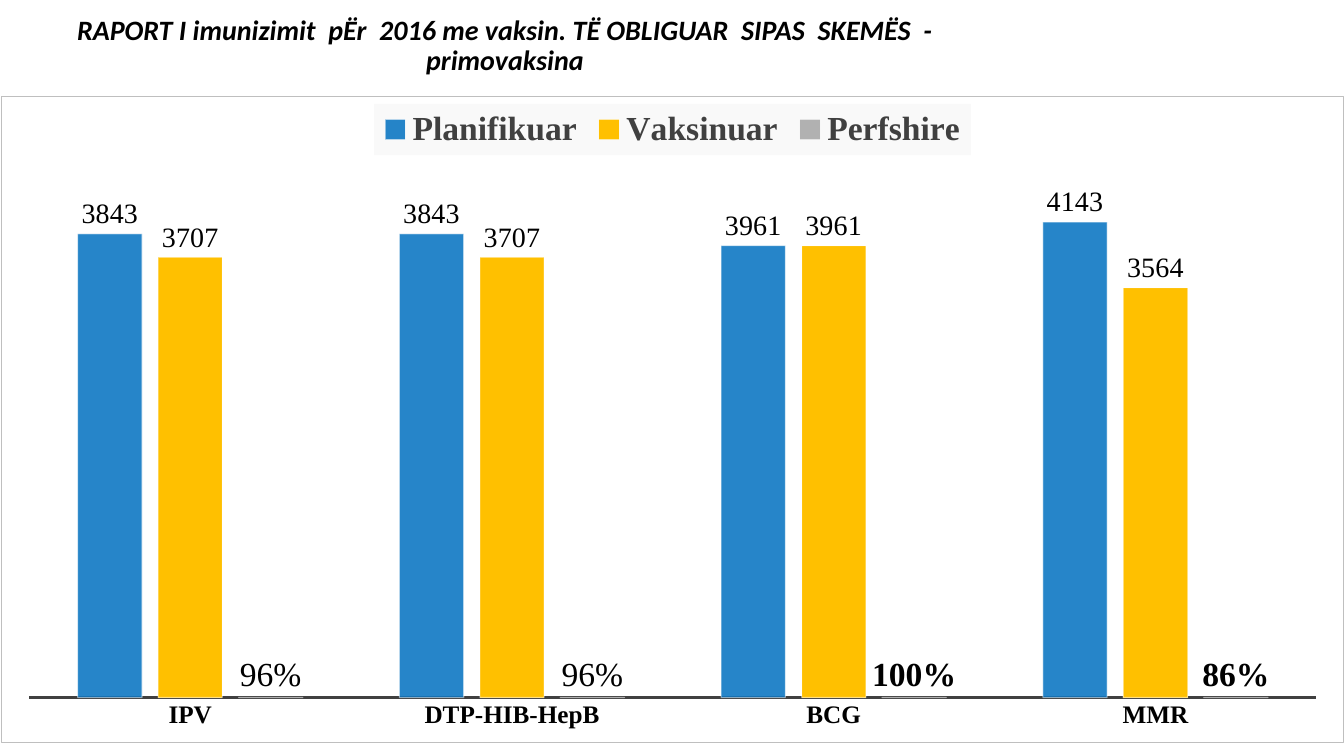
from lxml import etree
from pptx import Presentation
from pptx.chart.data import CategoryChartData
from pptx.dml.color import RGBColor
from pptx.enum.chart import XL_CHART_TYPE, XL_LABEL_POSITION, XL_LEGEND_POSITION, XL_TICK_MARK
from pptx.enum.text import MSO_ANCHOR, PP_ALIGN
from pptx.oxml import parse_xml
from pptx.oxml.ns import nsdecls, qn
from pptx.util import Pt

COLUMNS = XL_CHART_TYPE.COLUMN_CLUSTERED
ABOVE_BAR = XL_LABEL_POSITION.OUTSIDE_END
LEGEND_TOP = XL_LEGEND_POSITION.TOP
NO_TICK = XL_TICK_MARK.NONE
MIDDLE, CENTER = MSO_ANCHOR.MIDDLE, PP_ALIGN.CENTER

TITLE = "RAPORT I imunizimit  pËr  2016 me vaksin. TË OBLIGUAR  SIPAS  SKEMËS  - primovaksina"
VACCINES = ["IPV", "DTP-HIB-HepB", "BCG", "MMR"]
SERIES = [
    {"name": "Planifikuar", "values": [3943, 3943, 3843, 4043], "color": "planned", "opacity": 85,
     "labels": ["3843", "3843", "3961", "4143"], "size": 20, "format": "General"},
    {"name": "Vaksinuar", "values": [3742, 3742, 3843, 3485], "color": "vaccinated", "opacity": 100,
     "labels": ["3707", "3707", "3961", "3564"], "size": 20, "format": "General"},
    {"name": "Perfshire", "values": [0.95, 0.95, 1, 0.86], "color": "coverage", "opacity": 85,
     "labels": ["96%", "96%"], "size": 24, "format": "0%"},
]
COLORS = {
    "text": "000000", "planned": "0070C0", "vaccinated": "FFC000", "coverage": "A5A5A5",
    "bar_line": "FFFFFF", "axis": "404040", "legend": "404040", "legend_fill": "F9F9F9",
    "border": "BFBFBF",
}
TITLE_FONT, CHART_FONT = "Calibri", "Times New Roman"

EMU_PER_PX = 9071
SLIDE_SIZE = (1344, 756)
TITLE_BOX = (1, 0, 1008, 126)
TITLE_BOTTOM_INSET = 38
CHART_BOX = (1, 96, 1343, 647)
PLOT_BOX = (29, 168, 1288, 530)


def px(*lengths):
    return [length * EMU_PER_PX for length in lengths]


def rgb(name):
    return RGBColor.from_string(COLORS[name])


def format_font(font, size, color="text", name=CHART_FONT, bold=False, italic=False):
    font.size, font.name, font.bold, font.italic = Pt(size), name, bold, italic
    font.color.rgb = rgb(color)


def write_text(frame, text, **font_format):
    paragraph = frame.paragraphs[0]
    run = paragraph.add_run()
    run.text = text
    format_font(run.font, **font_format)
    return paragraph


def set_opacity(color_element, percent):
    etree.SubElement(color_element, qn("a:alpha")).set("val", str(percent * 1000))


def shape_properties(content):
    return parse_xml(f'<c:spPr {nsdecls("c", "a")}>{content}</c:spPr>')


def solid_fill(color):
    return f'<a:solidFill><a:srgbClr val="{COLORS[color]}"/></a:solidFill>'


def place_plot(plot_area):
    """Fix the inner plot area as fractions of the chart box."""
    for old_layout in plot_area.findall(qn("c:layout")):
        plot_area.remove(old_layout)
    left, top, width, height = CHART_BOX
    fractions = {
        "x": (PLOT_BOX[0] - left) / width, "y": (PLOT_BOX[1] - top) / height,
        "w": PLOT_BOX[2] / width, "h": PLOT_BOX[3] / height,
    }
    parts = '<c:layoutTarget val="inner"/><c:xMode val="edge"/><c:yMode val="edge"/>'
    parts += "".join(f'<c:{key} val="{value:.4f}"/>' for key, value in fractions.items())
    plot_area.insert(0, parse_xml(
        f'<c:layout {nsdecls("c")}><c:manualLayout>{parts}</c:manualLayout></c:layout>'))


def format_series(series, element, content):
    fill, line = series.format.fill, series.format.line
    fill.solid()
    fill.fore_color.rgb = rgb(content["color"])
    line.width = Pt(0.75)
    line.color.rgb = rgb("bar_line")
    set_opacity(element.xpath("c:spPr/a:solidFill/a:srgbClr")[0], content["opacity"])
    set_opacity(element.xpath("c:spPr/a:ln/a:solidFill/a:srgbClr")[0], 50)
    labels = series.data_labels
    labels.show_value = True
    labels.position = ABOVE_BAR
    labels.number_format, labels.number_format_is_linked = content["format"], False
    format_font(labels.font, content["size"], bold=True)
    for index, text in enumerate(content["labels"]):
        label = series.points[index].data_label
        write_text(label.text_frame, text, size=content["size"])
        label.position = ABOVE_BAR


def add_title(slide):
    title = slide.shapes.title
    title.left, title.top, title.width, title.height = px(*TITLE_BOX)
    frame = title.text_frame
    frame.word_wrap = True
    frame.vertical_anchor = MIDDLE
    frame.margin_bottom = px(TITLE_BOTTOM_INSET)[0]
    paragraph = write_text(frame, TITLE, size=20, name=TITLE_FONT, bold=True, italic=True)
    paragraph.alignment, paragraph.line_spacing = CENTER, 0.9


def add_vaccine_chart(slide):
    data = CategoryChartData()
    data.categories = VACCINES
    for content in SERIES:
        data.add_series(content["name"], content["values"])
    chart = slide.shapes.add_chart(COLUMNS, *px(*CHART_BOX), data).chart
    chart.has_title = False
    format_font(chart.font, 10, name=TITLE_FONT)

    plot = chart.plots[0]
    plot.gap_width, plot.overlap, plot.vary_by_categories = 150, -25, False
    for series, element, content in zip(plot.series, chart.element.xpath(".//c:ser"), SERIES):
        format_series(series, element, content)

    category_axis, value_axis = chart.category_axis, chart.value_axis
    category_axis.major_tick_mark = category_axis.minor_tick_mark = NO_TICK
    category_axis.format.line.width = Pt(1.5)
    category_axis.format.line.color.rgb = rgb("axis")
    format_font(category_axis.tick_labels.font, 18, bold=True)
    value_axis.minimum_scale, value_axis.maximum_scale = 0, 4500
    value_axis.has_major_gridlines = False
    value_axis.visible = False

    chart.has_legend = True
    chart.legend.position = LEGEND_TOP
    chart.legend.include_in_layout = False
    format_font(chart.legend.font, 24, color="legend", bold=True)

    place_plot(chart.element.xpath("c:chart/c:plotArea")[0])
    legend_text = chart.element.xpath("c:chart/c:legend/c:txPr")[0]
    legend_text.addprevious(shape_properties(solid_fill("legend_fill")))
    chart_text = chart.element.xpath("c:txPr")[0]
    chart_text.addprevious(shape_properties(
        f'<a:noFill/><a:ln w="{Pt(0.75)}">{solid_fill("border")}</a:ln>'))


def main():
    presentation = Presentation()
    presentation.slide_width, presentation.slide_height = px(*SLIDE_SIZE)
    slide = presentation.slides.add_slide(presentation.slide_layouts[5])
    add_title(slide)
    add_vaccine_chart(slide)
    presentation.save("out.pptx")


if __name__ == "__main__":
    main()
